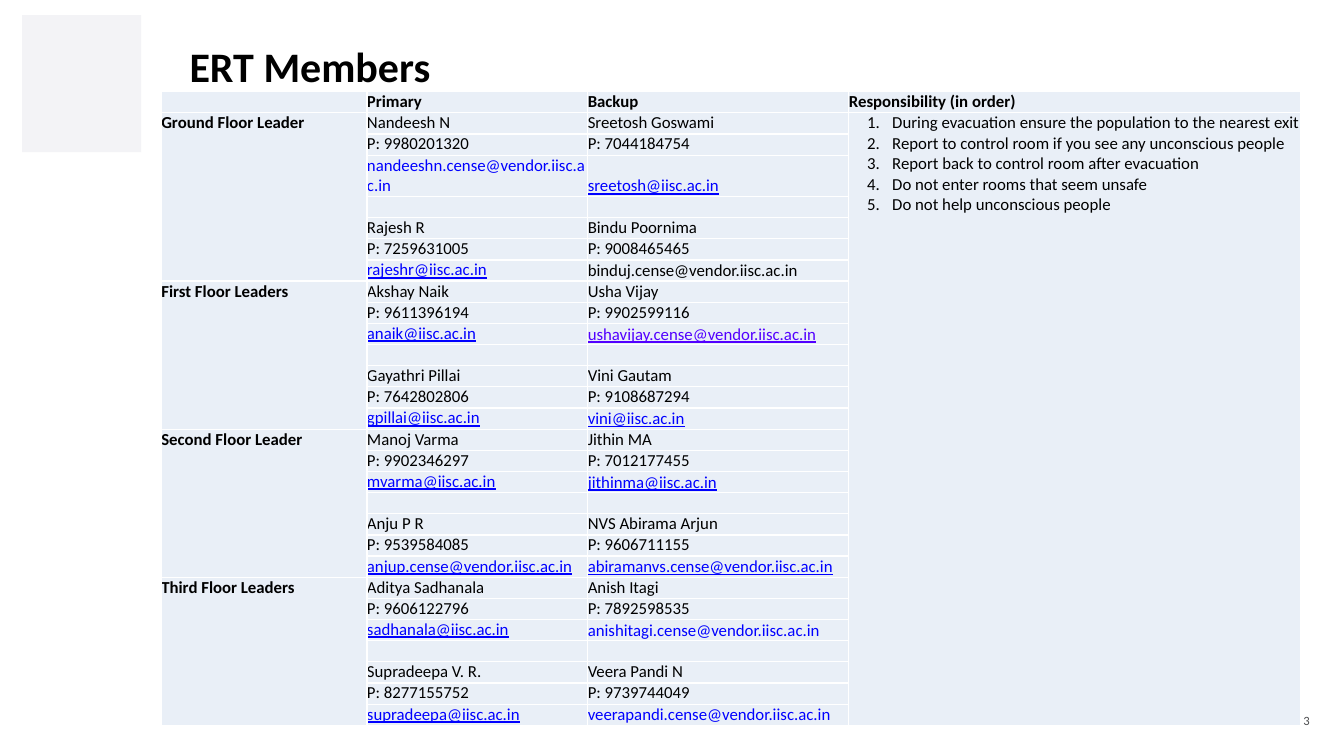
"""Build the ERT Members slide with its table of floor leaders."""
from lxml.etree import SubElement
from pptx import Presentation
from pptx.dml.color import RGBColor
from pptx.enum.shapes import MSO_SHAPE
from pptx.enum.text import MSO_ANCHOR as Anchor, PP_ALIGN as Align
from pptx.oxml.ns import qn
from pptx.util import Inches, Pt

LEADERS = {
    "Ground Floor Leader": [
        (("Nandeesh N", "9980201320", "nandeeshn.cense@vendor.iisc.ac.in"),
         ("Sreetosh Goswami", "7044184754", "sreetosh@iisc.ac.in")),
        (("Rajesh R", "7259631005", "rajeshr@iisc.ac.in"),
         ("Bindu Poornima", "9008465465", "binduj.cense@vendor.iisc.ac.in")),
    ],
    "First Floor Leaders": [
        (("Akshay Naik", "9611396194", "anaik@iisc.ac.in"),
         ("Usha Vijay", "9902599116", "ushavijay.cense@vendor.iisc.ac.in")),
        (("Gayathri Pillai", "7642802806", "gpillai@iisc.ac.in"),
         ("Vini Gautam", "9108687294", "vini@iisc.ac.in")),
    ],
    "Second Floor Leader": [
        (("Manoj Varma", "9902346297", "mvarma@iisc.ac.in"),
         ("Jithin MA", "7012177455", "jithinma@iisc.ac.in")),
        (("Anju P R", "9539584085", "anjup.cense@vendor.iisc.ac.in"),
         ("NVS Abirama Arjun", "9606711155", "abiramanvs.cense@vendor.iisc.ac.in")),
    ],
    "Third Floor Leaders": [
        (("Aditya Sadhanala", "9606122796", "sadhanala@iisc.ac.in"),
         ("Anish Itagi", "7892598535", "anishitagi.cense@vendor.iisc.ac.in")),
        (("Supradeepa V. R.", "8277155752", "supradeepa@iisc.ac.in"),
         ("Veera Pandi N", "9739744049", "veerapandi.cense@vendor.iisc.ac.in")),
    ],
}
DUTIES = [
    "During evacuation ensure the population to the nearest exit",
    "Report to control room if you see any unconscious people",
    "Report back to control room after evacuation",
    "Do not enter rooms that seem unsafe",
    "Do not help unconscious people",
]
EMAIL_COLORS = {"binduj": "000000", "ushavijay": "5200FF"}
NOT_UNDERLINED = {"nandeeshn", "binduj", "anishitagi", "veerapandi"}


def rgb(code):
    return RGBColor.from_string(code)


def write(para, text, size=12, color="000000", bold=False, underline=False):
    para.text = text
    font = para.font
    font.name, font.size, font.bold = "Calibri", Pt(size), bold
    font.underline = underline
    font.color.rgb = rgb(color)


deck = Presentation()
deck.slide_width, deck.slide_height = Inches(13.33), Inches(7.5)
page = deck.slides.add_slide(deck.slide_layouts[5])

block = page.shapes.add_shape(
    MSO_SHAPE.RECTANGLE, Inches(0.22), Inches(0.15), Inches(1.18), Inches(1.36))
block.shadow.inherit = False
block.fill.solid()
block.fill.fore_color.rgb = rgb("F3F3F6")
block.line.fill.background()

title = page.shapes.title
title.left, title.top = Inches(1.78), Inches(0.15)
title.width, title.height = Inches(11.3), Inches(1.01)
title.text_frame.vertical_anchor = Anchor.MIDDLE
heading = title.text_frame.paragraphs[0]
write(heading, "ERT Members", size=30, bold=True)
heading.alignment = Align.LEFT

number_box = page.shapes.add_textbox(Inches(11.63), Inches(6.95), Inches(1.46), Inches(0.4))
number_box.text_frame.word_wrap = True
number_box.text_frame.vertical_anchor = Anchor.MIDDLE
number = number_box.text_frame.paragraphs[0]
write(number, "3", size=9, color="4C4D4F")
number.alignment = Align.RIGHT

table = page.shapes.add_table(
    29, 4, Inches(1.6), Inches(0.91), Inches(11.3), Inches(6.29)).table
table.first_row = table.horz_banding = False
for column, width in zip(table.columns, (2.04, 2.19, 2.59, 4.48)):
    column.width = Inches(width)
for row in table.rows:
    row.height = Inches(0.21)
table.rows[3].height = Inches(0.41)

for cell in table.iter_cells():
    cell.margin_left = cell.margin_right = cell.margin_top = cell.margin_bottom = 0
    properties = cell._tc.get_or_add_tcPr()
    for side in ("a:lnL", "a:lnR", "a:lnT", "a:lnB"):
        border = SubElement(properties, qn(side), w=str(Pt(1)))
        SubElement(SubElement(border, qn("a:solidFill")), qn("a:srgbClr"), val="FFFFFF")
    cell.fill.solid()
    cell.fill.fore_color.rgb = rgb("E9EFF7")
    cell.text_frame.paragraphs[0]._p.get_or_add_endParaRPr().set("sz", "1200")

for col, label in enumerate(("Primary", "Backup", "Responsibility (in order)"), 1):
    write(table.cell(0, col).text_frame.paragraphs[0], label, bold=True)

for floor, (floor_name, pairs) in enumerate(LEADERS.items()):
    top = 1 + 7 * floor
    table.cell(top, 0).merge(table.cell(top + 6, 0))
    write(table.cell(top, 0).text_frame.paragraphs[0], floor_name, bold=True)
    for shift, pair in enumerate(pairs):
        for col, (name, phone, email) in enumerate(pair, 1):
            cells = [table.cell(top + 4 * shift + line, col) for line in range(3)]
            name_para, phone_para, email_para = [
                cell.text_frame.paragraphs[0] for cell in cells]
            user = email.split("@")[0].split(".")[0]
            write(name_para, name)
            write(phone_para, f"P: {phone}")
            write(email_para, email, color=EMAIL_COLORS.get(user, "0000FF"),
                  underline=user not in NOT_UNDERLINED)
            if col == 2:
                cells[2].vertical_anchor = Anchor.BOTTOM

table.cell(1, 3).merge(table.cell(28, 3))
duty_frame = table.cell(1, 3).text_frame
for index, duty in enumerate(DUTIES):
    para = duty_frame.add_paragraph() if index else duty_frame.paragraphs[0]
    layout = para._p.get_or_add_pPr()
    layout.set("marL", str(Inches(0.43)))
    layout.set("indent", str(Inches(-0.25)))
    SubElement(layout, qn("a:buFont"), typeface="+mj-lt")
    SubElement(layout, qn("a:buAutoNum"), type="arabicPeriod")
    write(para, duty)

deck.save("out.pptx")
